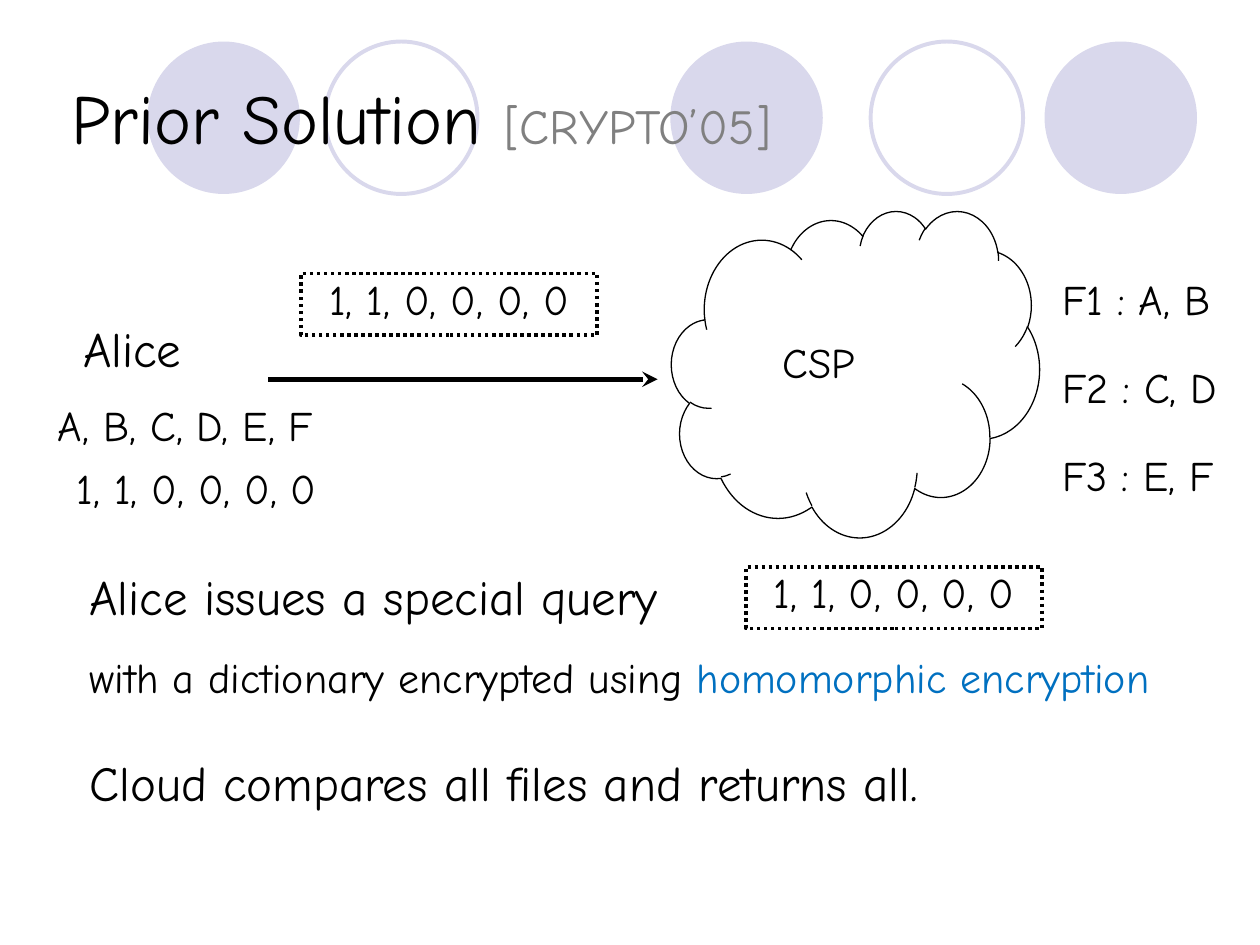
from pptx import Presentation
from pptx.dml.color import RGBColor
from pptx.enum.dml import MSO_LINE
from pptx.enum.shapes import MSO_CONNECTOR, MSO_SHAPE
from pptx.enum.text import MSO_ANCHOR, PP_ALIGN
from pptx.oxml.ns import qn
from pptx.util import Inches, Pt
from lxml import etree

FONT = "Comic Neue"
BLACK, GRAY, BLUE, LILAC = "000000", "808080", "0070C0", "D9D8EC"
BITS = "1, 1, 0, 0, 0, 0"


def rgb(value):
    return RGBColor.from_string(value)


def write(p, runs, align=PP_ALIGN.LEFT):
    """Fill a paragraph with (text, size, colour) runs."""
    p.alignment = align
    for text, size, color in runs:
        r = p.add_run()
        r.text = text
        for name, value in {"name": FONT, "size": Pt(size), "bold": False}.items():
            setattr(r.font, name, value)
        r.font.color.rgb = rgb(color)


def set_frame(tf, left, right, wrap=True, anchor=MSO_ANCHOR.TOP):
    frame = {"margin_left": Inches(left), "margin_right": Inches(right),
             "margin_top": 0, "margin_bottom": 0,
             "word_wrap": wrap, "vertical_anchor": anchor}
    for name, value in frame.items():
        setattr(tf, name, value)


def add_text(s, box, runs, align=PP_ALIGN.LEFT, wrap=True):
    tf = s.shapes.add_textbox(*map(Inches, box)).text_frame
    set_frame(tf, 0.04, 0.04, wrap)
    write(tf.paragraphs[0], runs, align)
    return tf


def add_outline(s, kind, box, color, width, fill=None):
    sp = s.shapes.add_shape(kind, *map(Inches, box))
    sp.shadow.inherit = False
    if fill:
        sp.fill.solid()
        sp.fill.fore_color.rgb = rgb(fill)
    else:
        sp.fill.background()
    if width:
        sp.line.color.rgb = rgb(color)
        sp.line.width = Pt(width)
    else:
        sp.line.fill.background()
    return sp


def add_circles(s, top, size):
    for left, filled in ((1.17, True), (2.58, False), (5.32, True),
                         (6.91, False), (8.29, True)):
        add_outline(s, MSO_SHAPE.OVAL, (left, top, size, size), LILAC,
                    0 if filled else 2.25, LILAC if filled else None)


def add_title(s, box):
    title = s.shapes.title
    title.left, title.top, title.width, title.height = map(Inches, box)
    set_frame(title.text_frame, 0.07, 0, anchor=MSO_ANCHOR.MIDDLE)
    write(title.text_frame.paragraphs[0],
          [("Prior Solution ", 40, BLACK), ("[CRYPTO’05]", 28, GRAY)])
    s.shapes._spTree.append(title._element)  # in front of the circles


def add_alice(s, left, top):
    add_text(s, (left + 0.2, top, 0.97, 0.54), [("Alice", 28, BLACK)], wrap=False)
    add_text(s, (left, top + 0.64, 2.32, 0.46),
             [("A, B, C, D, E, F", 24, BLACK)], wrap=False)
    add_text(s, (left - 0.05, top + 1.14, 2.38, 0.46),
             [(BITS, 24, BLACK)], PP_ALIGN.CENTER)


def add_query(s, left, top):
    """Dotted frame around the encrypted bits."""
    frame = add_outline(s, MSO_SHAPE.RECTANGLE, (left, top, 2.35, 0.49), BLACK, 2)
    frame.line.dash_style = MSO_LINE.ROUND_DOT
    add_text(s, (left, top, 2.35, 0.46), [(BITS, 24, BLACK)], PP_ALIGN.CENTER)


def add_arrow(s, x1, x2, y):
    line = s.shapes.add_connector(MSO_CONNECTOR.STRAIGHT, *map(Inches, (x1, y, x2, y)))
    line.line.color.rgb = rgb(BLACK)
    line.line.width = Pt(3)
    etree.SubElement(line.line._get_or_add_ln(), qn("a:tailEnd"), type="stealth")
    etree.SubElement(line._element.spPr, qn("a:effectLst"))


def add_cloud(s, left, top, width, height):
    add_outline(s, MSO_SHAPE.CLOUD, (left, top, width, height), BLACK, 0.75)
    add_text(s, (left + 0.84, top + 1, 0.92, 0.4), [("CSP", 24, BLACK)])


def add_files(s, left, top):
    for i, text in enumerate(("F1 : A, B", "F2 : C, D", "F3 : E, F")):
        add_text(s, (left, top + 0.7 * i, 1.38, 0.46), [(text, 24, BLACK)], wrap=False)


def add_explanation(s, left, top):
    add_text(s, (left, top, 5.28, 0.54), [("Alice issues a special query", 28, BLACK)])
    tf = add_text(s, (left, top + 0.67, 9.33, 1.3),
                  [("with a dictionary encrypted using ", 24, BLACK),
                   ("homomorphic encryption", 24, BLUE)])
    p = tf.add_paragraph()
    p.space_before = Pt(29)
    write(p, [("Cloud compares all files and returns all.", 28, BLACK)])


def main():
    prs = Presentation()
    prs.slide_width, prs.slide_height = Inches(10), Inches(7.5)
    s = prs.slides.add_slide(prs.slide_layouts[5])
    add_circles(s, 0.33, 1.21)
    add_title(s, (0.5, 0.3, 9, 1.25))
    add_alice(s, 0.42, 2.53)
    add_cloud(s, 5.33, 1.67, 2.92, 2.59)
    add_files(s, 8.39, 2.17)
    add_arrow(s, 2.13, 5.22, 3.01)
    add_query(s, 2.39, 2.17)
    add_query(s, 5.92, 4.5)
    add_explanation(s, 0.67, 4.5)
    prs.save("out.pptx")


if __name__ == "__main__":
    main()
